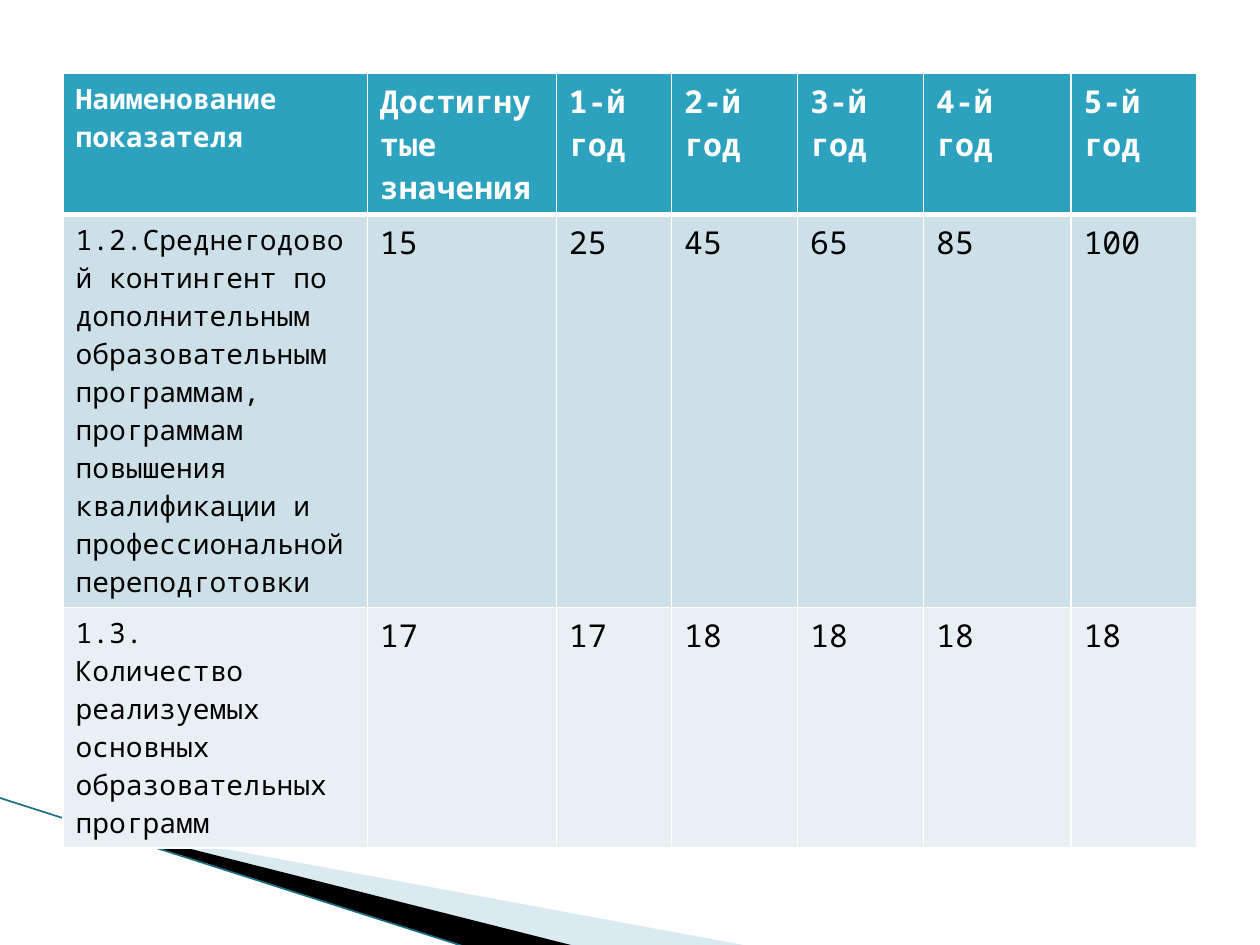
import pptx
import pptx.util
import pptx.dml.color
import pptx.enum.shapes
import pptx.oxml.ns
import lxml.etree

COLORS = {
    "white": "FFFFFF", "black": "000000", "header": "2DA2BF",
    "band_dark": "CDE0E8", "band_light": "E8F0F4",
    "wedge": "A0CBDC", "edge": "1B7085",
}
FONT = "Noto Sans Mono"

prs = pptx.Presentation()
prs.slide_width = pptx.util.Inches(10)
prs.slide_height = pptx.util.Inches(7.5)
X = prs.slide_width / 100
Y = prs.slide_height / 100
s = prs.slides.add_slide(prs.slide_layouts[6])


def rgb(name):
    return pptx.dml.color.RGBColor.from_string(COLORS[name])


def add_xml(parent, tag, **attrs):
    el = lxml.etree.SubElement(parent, pptx.oxml.ns.qn(tag))
    for key, value in attrs.items():
        el.set(key, str(value))
    return el


wedges = [
    ("wedge", 40, (7.8, 72.93, 41.6, 21.07),
     [(5.5, 86.8), (59.5, 100.13), (45.6, 100.13), (5.5, 86.67)]),
    ("black", 100, (-0.6, 84.4, 41.6, 12.27),
     [(5.3, 86.53), (45.7, 100.13), (37.2, 100.27), (5.4, 86.67)]),
]
for color, opacity, (left, top, width, height), points in wedges:
    outline = [(round(x * X), round(y * Y)) for x, y in points]
    fb = s.shapes.build_freeform(*outline[0])
    fb.add_line_segments(outline[1:], close=True)
    sp = fb.convert_to_shape()
    sp.left, sp.width = round(left * X), round(width * X)
    sp.top, sp.height = round(top * Y), round(height * Y)
    frame_path = next(sp._element.iter(pptx.oxml.ns.qn("a:path")))
    frame_path.set("w", str(sp.width))
    frame_path.set("h", str(sp.height))
    for pt, (x, y) in zip(frame_path.iter(pptx.oxml.ns.qn("a:pt")), outline):
        pt.set("x", str(x - sp.left))
        pt.set("y", str(y - sp.top))
    sp.shadow.inherit = False
    sp.fill.solid()
    sp.fill.fore_color.rgb = rgb(color)
    sp.line.fill.background()
    if opacity < 100:
        clr = sp.fill._xPr.find(".//" + pptx.oxml.ns.qn("a:srgbClr"))
        add_xml(clr, "a:alpha", val=opacity * 1000)

edge = s.shapes.add_connector(
    pptx.enum.shapes.MSO_CONNECTOR.STRAIGHT,
    round(-0.1 * X), round(84.4 * Y), round(37.1 * X), round(100.27 * Y))
edge.line.color.rgb = rgb("edge")
edge.line.width = pptx.util.Pt(0.95)
add_xml(edge._element.spPr, "a:effectLst")

rows = [
    ["Наименование показателя", "Достигнутые значения"]
    + [f"{year}-й год" for year in range(1, 6)],
    ["1.2.Среднегодовой контингент по дополнительным образовательным "
     "программам, программам повышения квалификации и профессиональной "
     "переподготовки", "15", "25", "45", "65", "85", "100"],
    ["1.3.\vКоличество реализуемых основных образовательных программ",
     "17", "17", "18", "18", "18", "18"],
]
col_shares = [24.15, 15, 9.15, 10, 10, 11.7, 10]
row_shares = [12.8, 35.33, 23.07]
fills = ["header", "band_dark", "band_light"]

frame = s.shapes.add_table(
    len(rows), len(col_shares), round(5 * X), round(7.78 * Y),
    round(sum(col_shares) * X), round(sum(row_shares) * Y))
table = frame.table
for column, share in zip(table.columns, col_shares):
    column.width = round(share * X)
for row, share in zip(table.rows, row_shares):
    row.height = round(share * Y)

for i, texts in enumerate(rows):
    for j, text in enumerate(texts):
        cell = table.cell(i, j)
        cell.text_frame.text = text
        for r in cell.text_frame.paragraphs[0].runs:
            r.font.name = FONT
            r.font.size = pptx.util.Pt(16 if j == 0 else 18)
            r.font.bold = i == 0
            r.font.color.rgb = rgb("white" if i == 0 else "black")
        tcPr = cell._tc.get_or_add_tcPr()
        for side in ("L", "R", "T", "B"):
            header_rule = (i, side) in ((0, "B"), (1, "T"))
            ln = add_xml(tcPr, f"a:ln{side}",
                         w=pptx.util.Pt(3 if header_rule else 1))
            add_xml(add_xml(ln, "a:solidFill"), "a:srgbClr", val=COLORS["white"])
        cell.fill.solid()
        cell.fill.fore_color.rgb = rgb(fills[i])

prs.save("out.pptx")
